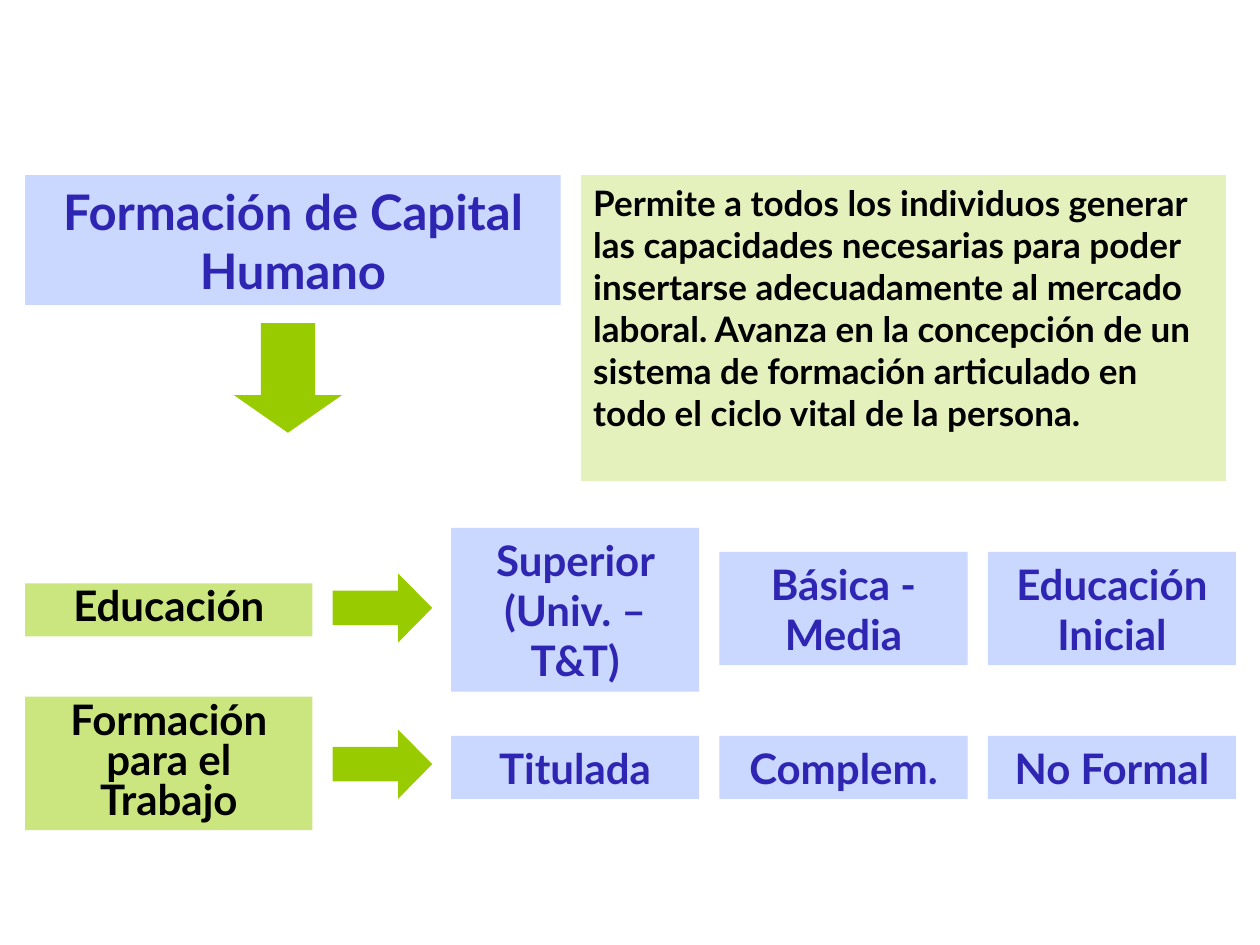
from dataclasses import dataclass

from lxml import etree
from pptx import Presentation
from pptx.dml.color import RGBColor
from pptx.enum.shapes import MSO_SHAPE
from pptx.enum.text import MSO_ANCHOR, MSO_AUTO_SIZE, PP_ALIGN
from pptx.oxml.ns import qn
from pptx.util import Inches, Pt

RECTANGLE = MSO_SHAPE.RECTANGLE
RIGHT_ARROW = MSO_SHAPE.RIGHT_ARROW
TOP, MIDDLE = MSO_ANCHOR.TOP, MSO_ANCHOR.MIDDLE
LEFT, CENTER = PP_ALIGN.LEFT, PP_ALIGN.CENTER
GROW = MSO_AUTO_SIZE.SHAPE_TO_FIT_TEXT

BLUE = RGBColor(0x33, 0x66, 0xFF)
GREEN = RGBColor(0x99, 0xCC, 0x00)
INDIGO = RGBColor(0x2F, 0x25, 0xB3)
BLACK = RGBColor(0x00, 0x00, 0x00)
FONT = "Lato"


@dataclass(frozen=True)
class BoxStyle:
    fill: RGBColor
    opacity: int
    color: RGBColor
    size: int
    alignment: PP_ALIGN = CENTER
    anchor: MSO_ANCHOR = TOP
    line_spacing: float = 1.0


@dataclass(frozen=True)
class Box:
    text: str
    left: float
    top: float
    width: float
    height: float
    style: BoxStyle


@dataclass(frozen=True)
class Arrow:
    left: float
    top: float
    width: float
    height: float
    head: float
    rotation: int = 0


TITLE = BoxStyle(BLUE, 26, INDIGO, 28)
DESCRIPTION = BoxStyle(GREEN, 26, BLACK, 20, LEFT)
CATEGORY = BoxStyle(GREEN, 50, BLACK, 24, CENTER, MIDDLE, 0.8)
LEVEL = BoxStyle(BLUE, 26, INDIGO, 24)

MARGIN = 0.2
LEVEL_LEFT, LEVEL_STEP, LEVEL_WIDTH = 3.58, 2.13, 1.97

# Each row of levels: (text, top, height) from left to right
LEVEL_ROWS = [
    [("Superior (Univ. – T&T)", 4.19, 1.3), ("Básica - Media", 4.38, 0.9),
     ("Educación Inicial", 4.38, 0.9)],
    [(text, 5.84, 0.5) for text in ("Titulada", "Complem.", "No Formal")],
]

BOXES = [
    Box("Formación de Capital Humano", MARGIN, 1.39, 4.25, 1.03, TITLE),
    Box("Permite a todos los individuos generar las capacidades necesarias "
        "para poder insertarse adecuadamente al mercado laboral. Avanza en la "
        "concepción de un sistema de formación articulado en todo el ciclo "
        "vital de la persona.", 4.61, 1.39, 5.12, 2.43, DESCRIPTION),
    Box("Educación", MARGIN, 4.63, 2.28, 0.42, CATEGORY),
    Box("Formación para el Trabajo", MARGIN, 5.53, 2.28, 1.06, CATEGORY),
] + [
    Box(text, LEVEL_LEFT + column * LEVEL_STEP, top, LEVEL_WIDTH, height, LEVEL)
    for row in LEVEL_ROWS
    for column, (text, top, height) in enumerate(row)
]

ARROWS = [Arrow(1.85, 2.57, 0.87, 0.86, 0.348, 90)] + [
    Arrow(2.64, top, 0.79, 0.55, 0.493) for top in (4.55, 5.79)
]


def add_filled_shape(slide, preset: MSO_SHAPE, item: Box | Arrow,
                     fill: RGBColor):
    shape = slide.shapes.add_shape(
        preset, Inches(item.left), Inches(item.top),
        Inches(item.width), Inches(item.height))
    shape.shadow.inherit = False
    shape.fill.solid()
    shape.fill.fore_color.rgb = fill
    shape.line.fill.background()
    return shape


def set_opacity(shape, percent: int) -> None:
    color = shape.fill._xPr.find(qn("a:solidFill"))[0]
    etree.SubElement(color, qn("a:alpha"), val=str(percent * 1000))


def add_box(slide, box: Box) -> None:
    style = box.style
    shape = add_filled_shape(slide, RECTANGLE, box, style.fill)
    set_opacity(shape, style.opacity)
    frame = shape.text_frame
    frame.word_wrap = True
    frame.auto_size = GROW
    frame.vertical_anchor = style.anchor
    paragraph = frame.paragraphs[0]
    paragraph.alignment = style.alignment
    paragraph.line_spacing = style.line_spacing
    run = paragraph.add_run()
    run.text = box.text
    run.font.color.rgb = style.color
    font_values = {"name": FONT, "size": Pt(style.size), "bold": True}
    for name, value in font_values.items():
        setattr(run.font, name, value)


def add_arrow(slide, arrow: Arrow) -> None:
    shape = add_filled_shape(slide, RIGHT_ARROW, arrow, GREEN)
    shape.adjustments[0] = 0.5
    shape.adjustments[1] = arrow.head
    shape.rotation = arrow.rotation


def main() -> None:
    presentation = Presentation()
    presentation.slide_width = Inches(10)
    presentation.slide_height = Inches(7.5)
    slide = presentation.slides.add_slide(presentation.slide_layouts[6])

    # Title, description, categories and levels
    for box in BOXES:
        add_box(slide, box)

    # Flow from title to categories and from categories to levels
    for arrow in ARROWS:
        add_arrow(slide, arrow)

    presentation.save("out.pptx")


if __name__ == "__main__":
    main()
